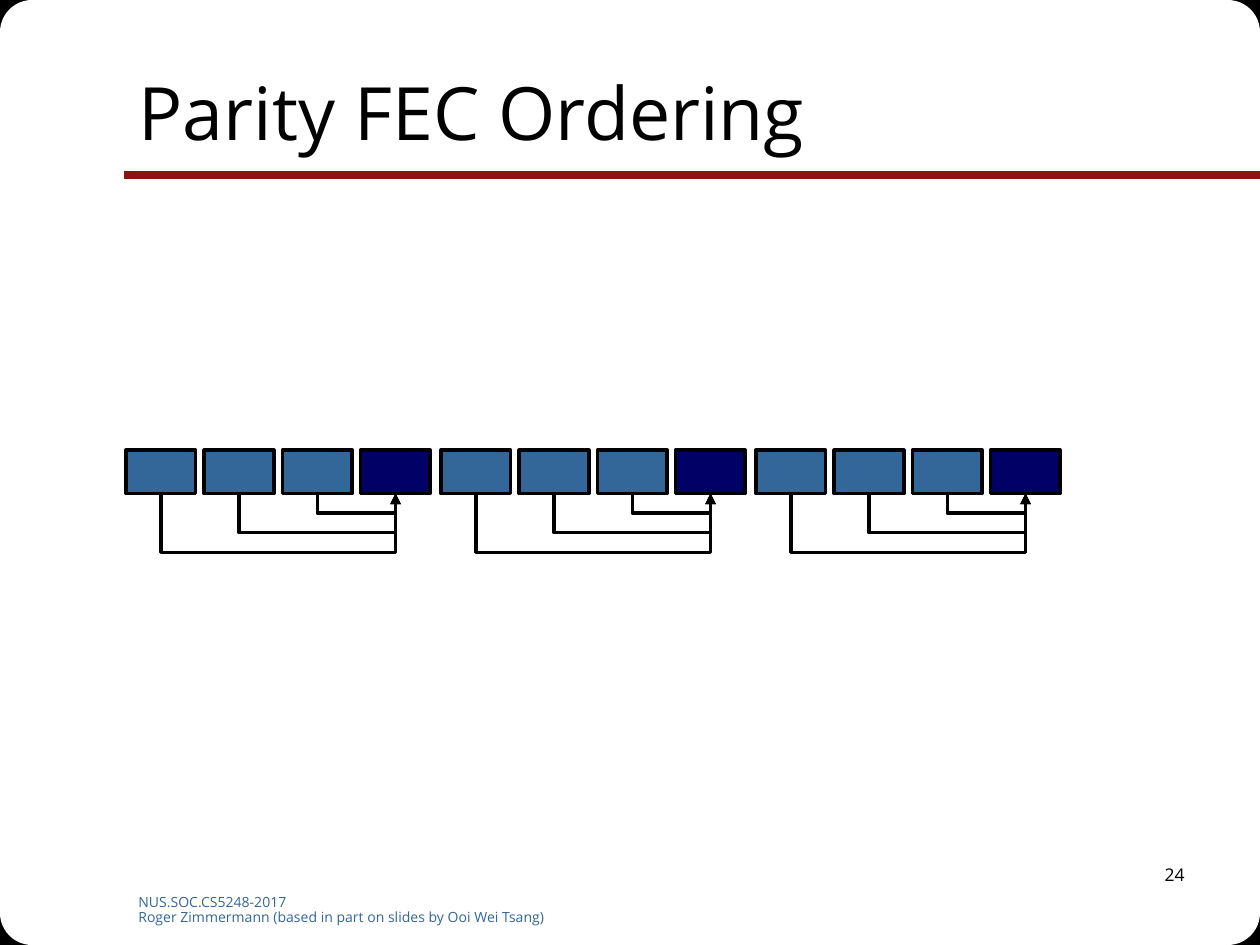
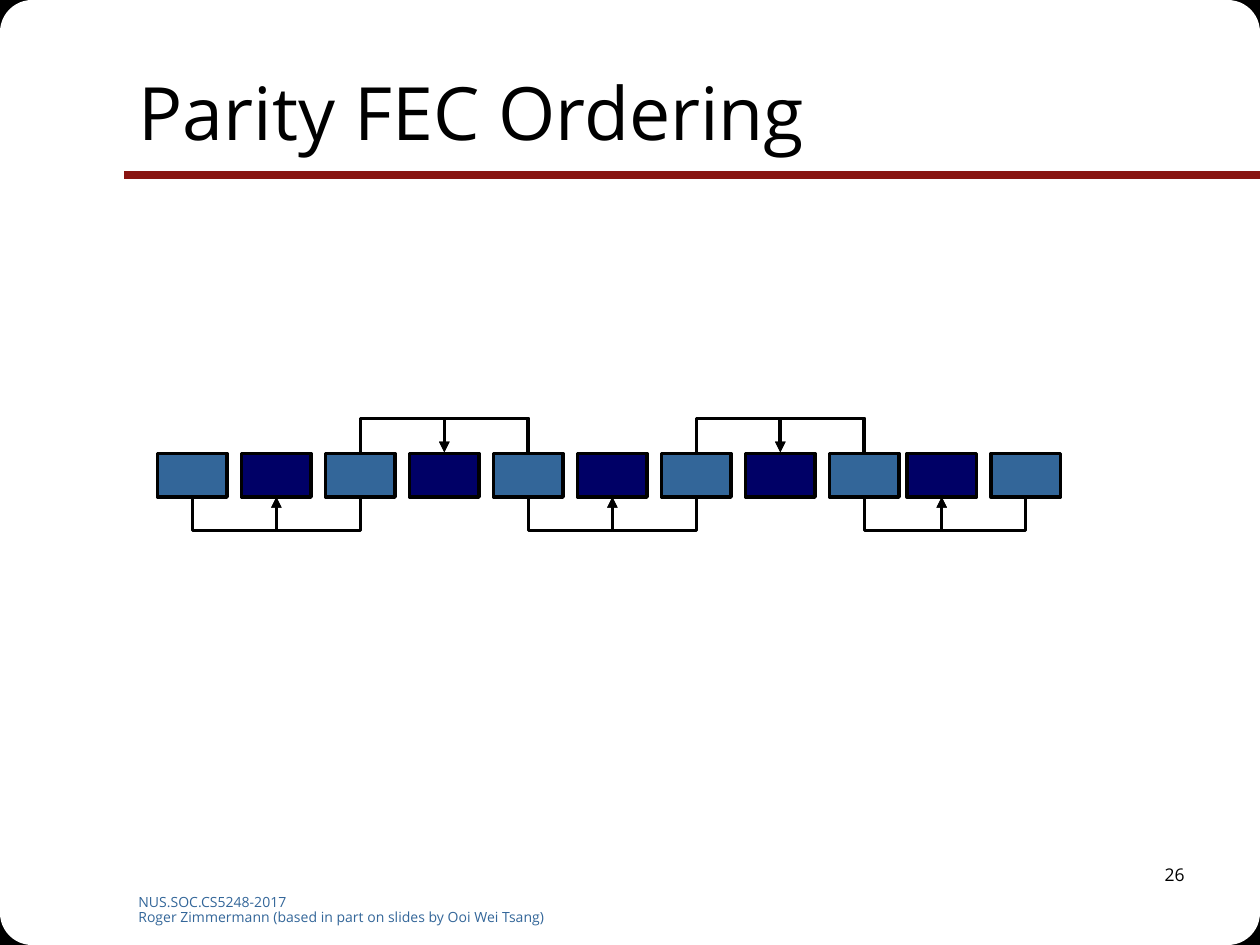
from itertools import product

from lxml import etree
from pptx import Presentation
from pptx.dml.color import RGBColor
from pptx.enum.shapes import MSO_CONNECTOR, MSO_SHAPE
from pptx.enum.text import MSO_ANCHOR, MSO_AUTO_SIZE, PP_ALIGN
from pptx.oxml.ns import qn
from pptx.util import Pt

RECTANGLE, ROUNDED = MSO_SHAPE.RECTANGLE, MSO_SHAPE.ROUNDED_RECTANGLE
STRAIGHT, ELBOW = MSO_CONNECTOR.STRAIGHT, MSO_CONNECTOR.ELBOW
LEFT, RIGHT = PP_ALIGN.LEFT, PP_ALIGN.RIGHT

BLACK = RGBColor(0x00, 0x00, 0x00)
WHITE = RGBColor(0xFF, 0xFF, 0xFF)
RED = RGBColor(0x89, 0x14, 0x11)
DATA_BLUE = RGBColor(0x33, 0x66, 0x99)
PARITY_BLUE = RGBColor(0x00, 0x00, 0x66)
FONT = "Open Sans"

TITLE = "Parity FEC Ordering"
FOOTER = ["NUS.SOC.CS5248-2017",
          "Roger Zimmermann (based in part on slides by Ooi Wei Tsang)"]

# D is a data packet, P a parity packet
BLOCKS = ["DDDP", "DDDP", "DDDP"]
INTERLEAVED = "DPDPDPDPDPD"

PAGE_WIDTH, PAGE_HEIGHT = 720, 540
PACKET_WIDTH, PACKET_HEIGHT = 39.8, 24.8
LINE_WIDTH = 2
ELBOW_RISE = 0.1  # an elbow needs some extent to scale its bend

# (points right, bends down): rotation and flips of the elbow
ELBOW_TURNS = {
    (True, True): {"rot": "16200000", "flipH": "1"},
    (False, True): {"rot": "5400000"},
    (True, False): {"rot": "5400000", "flipV": "1"},
    (False, False): {"rot": "16200000", "flipH": "1", "flipV": "1"},
}


def add_box(page, kind, left, top, width, height, fill, line_width=0):
    box = page.shapes.add_shape(kind, Pt(left), Pt(top), Pt(width), Pt(height))
    box.shadow.inherit = False
    box.fill.solid()
    box.fill.fore_color.rgb = fill
    if line_width:
        box.line.color.rgb = BLACK
        box.line.width = Pt(line_width)
    else:
        box.line.fill.background()
    return box


def add_line(page, kind, start, end, color, width):
    points = [Pt(value) for value in (*start, *end)]
    line = page.shapes.add_connector(kind, *points)
    line.line.color.rgb = color
    line.line.width = Pt(width)
    etree.SubElement(line.element.spPr, qn("a:effectLst"))
    return line


def add_bent_arrow(page, start_x, end_x, y, depth):
    """Draw a U-shaped arrow between two points at height y; depth > 0 bends down."""
    span, middle = abs(end_x - start_x), (start_x + end_x) / 2
    left, top = middle - ELBOW_RISE / 2, y - span / 2
    arrow = add_line(page, ELBOW, (left, top), (left + ELBOW_RISE, top + span),
                     BLACK, LINE_WIDTH)
    properties = arrow.element.spPr
    for name, value in ELBOW_TURNS[end_x > start_x, depth > 0].items():
        properties.find(qn("a:xfrm")).set(name, value)
    guides = properties.find(qn("a:prstGeom")).get_or_add_avLst()
    bend = round(depth / ELBOW_RISE * 100000)
    etree.SubElement(guides, qn("a:gd"), name="adj1", fmla=f"val {bend}")
    etree.SubElement(properties.find(qn("a:ln")), qn("a:tailEnd"), type="triangle")


def format_text(frame, size, color, align):
    frame.word_wrap = True
    for para in frame.paragraphs:
        para.alignment = align
        para.line_spacing = 0.9
        for span in para.runs:
            span.font.name = FONT
            span.font.size = Pt(size)
            span.font.color.rgb = color


def add_text(page, lines, left, top, width, height, size, color, align):
    box = page.shapes.add_textbox(Pt(left), Pt(top), Pt(width), Pt(height))
    box.text_frame.text = "\n".join(lines)
    format_text(box.text_frame, size, color, align)


def add_corners(page, kind, width, height, fill, line_width=0):
    for left, top in product((0, PAGE_WIDTH - width), (0, PAGE_HEIGHT - height)):
        add_box(page, kind, left, top, width, height, fill, line_width)


def add_page(deck, number):
    page = deck.slides.add_slide(deck.slide_layouts[5])
    add_corners(page, RECTANGLE, 31, 31.5, BLACK, 0.75)
    add_corners(page, ROUNDED, 110, 110, WHITE)
    add_line(page, STRAIGHT, (PAGE_WIDTH, 100), (70.8, 100), RED, 4.5)
    add_text(page, FOOTER, 72, 508, 294, 20, 8, DATA_BLUE, LEFT)
    add_text(page, [str(number)], 534, 491.5, 150, 36, 10, BLACK, RIGHT)

    title = page.shapes.title
    title.left, title.top, title.width, title.height = Pt(72), Pt(21.6), Pt(612), Pt(90)
    frame = title.text_frame
    frame.text = TITLE
    frame.auto_size = MSO_AUTO_SIZE.NONE
    frame.vertical_anchor = MSO_ANCHOR.MIDDLE
    format_text(frame, 42, BLACK, LEFT)
    title.element.getparent().append(title.element)  # in front of the corners
    return page


def add_packets(page, kinds, lefts, top):
    """Draw a row of packets and return their centres."""
    for kind, left in zip(kinds, lefts):
        fill = PARITY_BLUE if kind == "P" else DATA_BLUE
        add_box(page, RECTANGLE, left, top, PACKET_WIDTH, PACKET_HEIGHT, fill, LINE_WIDTH)
    return [left + PACKET_WIDTH / 2 for left in lefts]


def draw_blocks(page):
    """Each parity packet follows the data packets it protects."""
    top, pitch, lane = 257.2, 44.7, 9.9
    for index, kinds in enumerate(BLOCKS):
        lefts = [72 + 180 * index + pitch * place for place in range(len(kinds))]
        *sources, target = add_packets(page, kinds, lefts, top)
        for place, source in enumerate(sources):
            depth = lane * (len(sources) - place)
            add_bent_arrow(page, source, target, top + PACKET_HEIGHT, depth)


def draw_interleaved(page):
    """Each parity packet sits between its two data packets; arrows alternate sides."""
    top, pitch, depth, last_pair_shift = 259.2, 48, 17, 3.8
    count = len(INTERLEAVED)
    lefts = [90 + pitch * place - (last_pair_shift if place >= count - 2 else 0)
             for place in range(count)]
    centers = add_packets(page, INTERLEAVED, lefts, top)
    for place in range(1, count, 2):
        below = place % 4 == 1
        y = top + PACKET_HEIGHT if below else top - 0.8
        for source in (centers[place - 1], centers[place + 1]):
            add_bent_arrow(page, source, centers[place], y, depth if below else -depth)


def main():
    deck = Presentation()
    deck.slide_width, deck.slide_height = Pt(PAGE_WIDTH), Pt(PAGE_HEIGHT)
    draw_blocks(add_page(deck, 24))
    draw_interleaved(add_page(deck, 26))
    deck.save("out.pptx")


if __name__ == "__main__":
    main()
